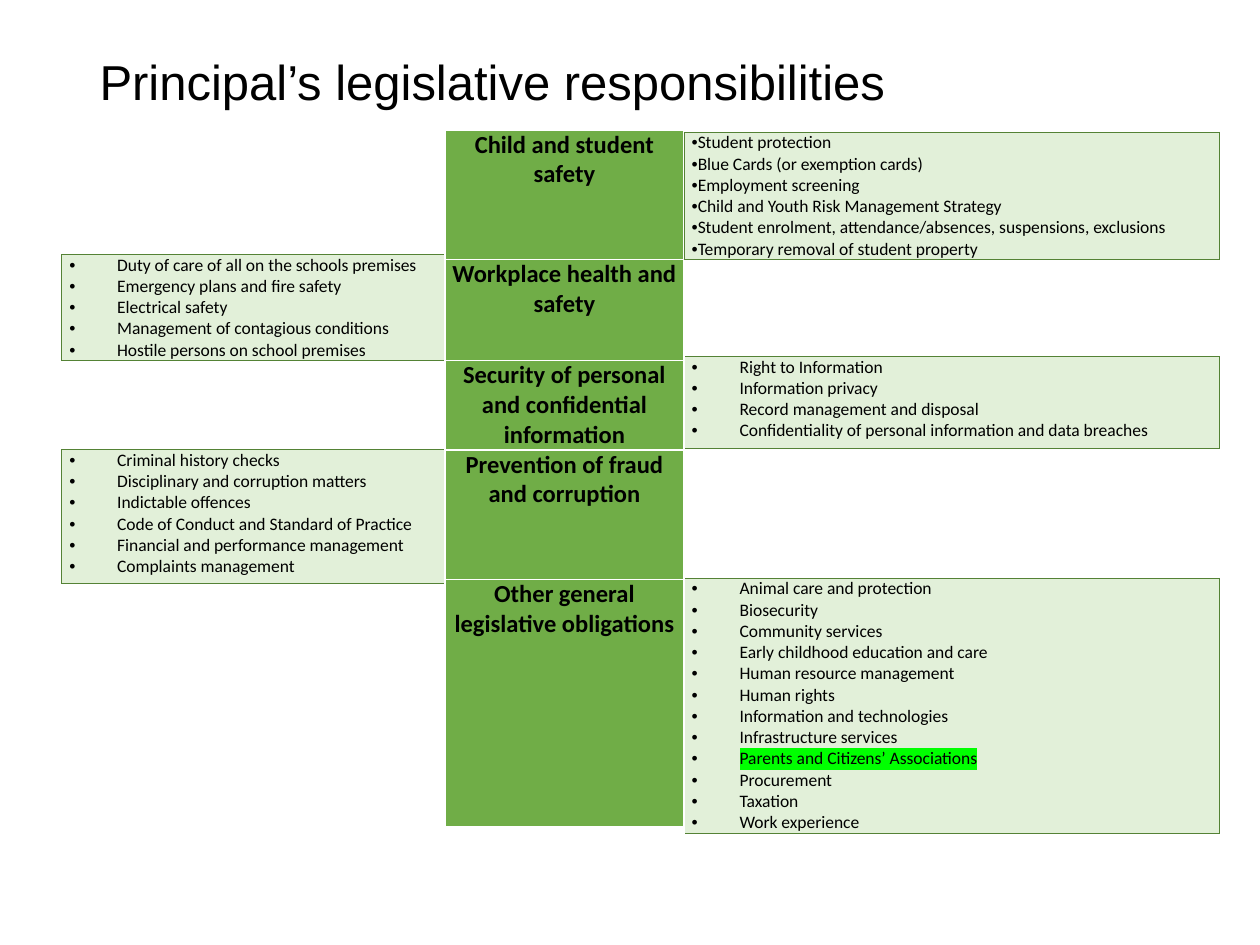
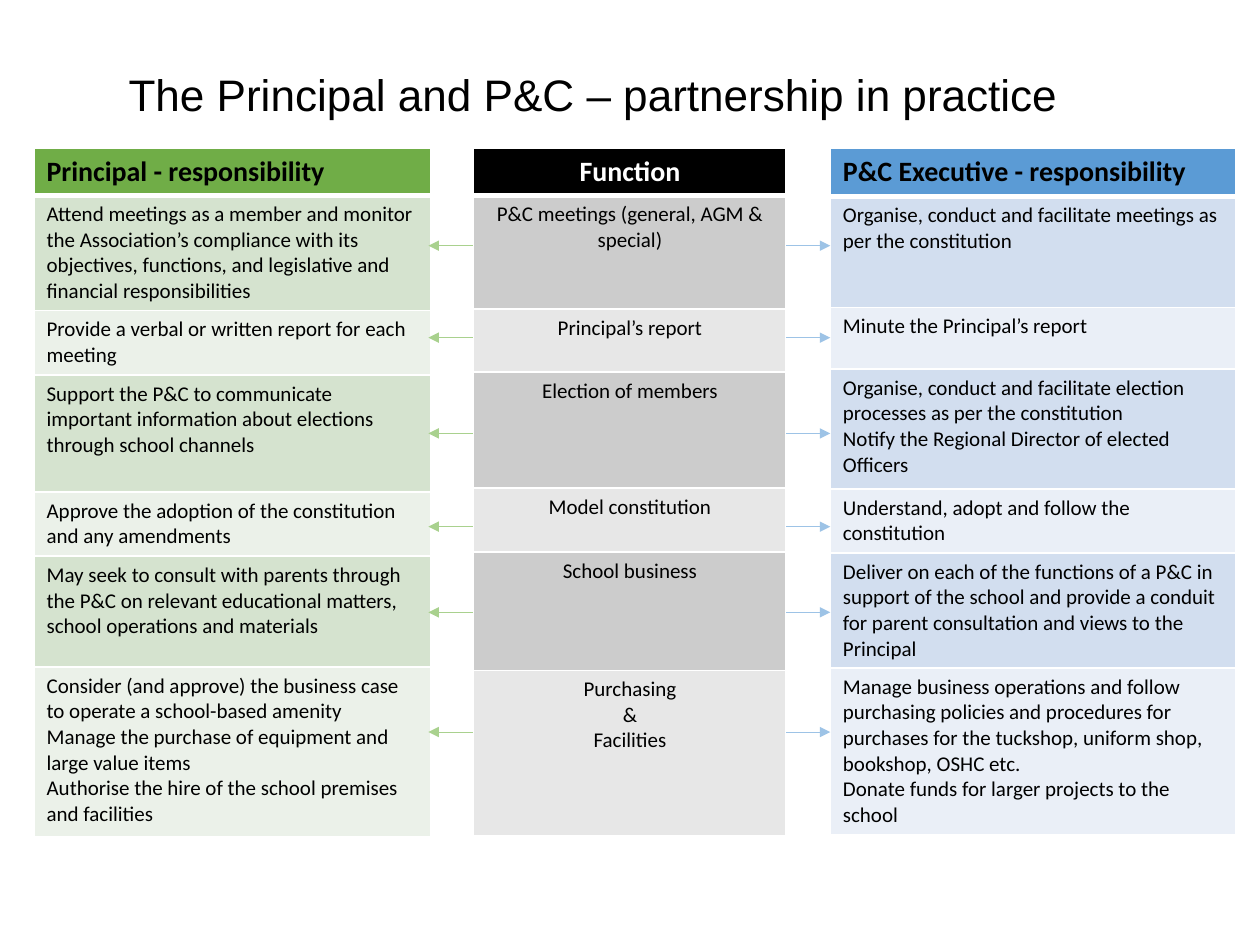
from lxml.etree import SubElement
from pptx import Presentation
from pptx.dml.color import RGBColor
from pptx.enum.shapes import MSO_CONNECTOR
from pptx.enum.text import MSO_ANCHOR, MSO_AUTO_SIZE, PP_ALIGN
from pptx.oxml.ns import qn
from pptx.util import Inches, Pt

BLACK, WHITE = "000000", "FFFFFF"
GREEN, DARK_GREEN, PALE_GREEN = "70AD47", "548235", "E2F0D9"
BLUE, LIME = "5B9BD5", "00FF00"
LEFT_ARROW, RIGHT_ARROW = "A9D18E", "9DC3E6"
WHITE_EDGE, GREEN_EDGE, HEADER_EDGE = (WHITE, 1), (DARK_GREEN, 0.5), (WHITE, 3)
BULLET_INDENT = 0.38
TIGHT_MARGINS = (0.06, 0)
NORMAL_MARGINS = (0.1, 0.05)

DUTY_AREAS = [
    ("Child and student safety", 1.03),
    ("Workplace health and safety", 0.8),
    ("Security of personal and confidential information", 0.7),
    ("Prevention of fraud and corruption", 1.03),
    ("Other general legislative obligations", 1.96),
]
STUDENT_SAFETY = [
    "Student protection",
    "Blue Cards (or exemption cards)",
    "Employment screening",
    "Child and Youth Risk Management Strategy",
    "Student enrolment, attendance/absences, suspensions, exclusions",
    "Temporary removal of student property",
]
WORKPLACE_SAFETY = [
    "Duty of care of all on the schools premises",
    "Emergency plans and fire safety",
    "Electrical safety",
    "Management of contagious conditions",
    "Hostile persons on school premises",
]
INFORMATION_SECURITY = [
    "Right to Information",
    "Information privacy",
    "Record management and disposal",
    "Confidentiality of personal information and data breaches",
]
FRAUD_PREVENTION = [
    "Criminal history checks",
    "Disciplinary and corruption matters",
    "Indictable offences",
    "Code of Conduct and Standard of Practice",
    "Financial and performance management",
    "Complaints management",
]
HIGHLIGHTED = "Parents and Citizens’ Associations"
OTHER_OBLIGATIONS = [
    "Animal care and protection",
    "Biosecurity",
    "Community services",
    "Early childhood education and care",
    "Human resource management",
    "Human rights",
    "Information and technologies",
    "Infrastructure services",
    HIGHLIGHTED,
    "Procurement",
    "Taxation",
    "Work experience",
]

EXECUTIVE_ROWS = [
    (["P&C Executive - responsibility"], 0.38),
    (["Organise, conduct and facilitate meetings as per the constitution"], 0.88),
    (["Minute the Principal’s report"], 0.49),
    (["Organise, conduct and facilitate election processes as per the constitution",
      "Notify the Regional Director of elected Officers"], 0.95),
    (["Understand, adopt and follow the constitution"], 0.51),
    (["Deliver on each of the functions of a P&C in support of the school and provide "
      "a conduit for parent consultation and views to the Principal"], 0.91),
    (["Manage business operations and follow purchasing policies and procedures for "
      "purchases for the tuckshop, uniform shop, bookshop, OSHC etc.",
      "Donate funds for larger projects to the school"], 1.31),
]
FUNCTION_ROWS = [
    (["Function"], 0.37),
    (["P&C meetings (general, AGM & special)"], 0.9),
    (["Principal’s report"], 0.5),
    (["Election of members"], 0.92),
    (["Model constitution"], 0.51),
    (["School business"], 0.94),
    (["Purchasing", "&", "Facilities"], 1.31),
]
PRINCIPAL_ROWS = [
    (["Principal - responsibility"], 0.37),
    (["Attend meetings as a member and monitor the Association’s compliance with its "
      "objectives, functions, and legislative and financial responsibilities"], 0.91),
    (["Provide a verbal or written report for each meeting"], 0.51),
    (["Support the P&C to communicate important information about elections through "
      "school channels"], 0.93),
    (["Approve the adoption of the constitution and any amendments"], 0.51),
    (["May seek to consult with parents through the P&C on relevant educational "
      "matters, school operations and materials"], 0.88),
    (["Consider (and approve) the business case to operate a school-based amenity",
      "Manage the purchase of equipment and large value items",
      "Authorise the hire of the school premises and facilities"], 1.35),
]
ARROW_HEIGHTS = [1.95, 2.68, 3.44, 4.18, 4.86, 5.81]


def color(value):
    """Turn a hex string into a colour."""
    return RGBColor.from_string(value)


def format_font(font, name, size, text_color, bold=False):
    """Set the face, size, colour and weight of a font."""
    font.name, font.size, font.bold = name, Pt(size), bold
    font.color.rgb = color(text_color)


def add_titled_slide(presentation, title, left, top, width, height, size):
    """Add a title-only slide with its title placed and formatted."""
    slide = presentation.slides.add_slide(presentation.slide_layouts[5])
    shape = slide.shapes.title
    shape.left, shape.top = Inches(left), Inches(top)
    shape.width, shape.height = Inches(width), Inches(height)
    frame = shape.text_frame
    frame.text = title
    frame.auto_size = MSO_AUTO_SIZE.NONE
    frame.vertical_anchor = MSO_ANCHOR.MIDDLE
    paragraph = frame.paragraphs[0]
    paragraph.alignment = PP_ALIGN.LEFT
    paragraph.line_spacing = 0.9
    format_font(paragraph.font, "Arial", size, BLACK)
    return slide


def add_column(slide, left, top, width, heights):
    """Add a plain one-column table and return its cells."""
    frame = slide.shapes.add_table(len(heights), 1, Inches(left), Inches(top),
                                   Inches(width), Inches(sum(heights)))
    table = frame.table
    table.first_row = table.horz_banding = False
    for row, height in zip(table.rows, heights):
        row.height = Inches(height)
    return [row.cells[0] for row in table.rows]


def set_borders(cell, left=WHITE_EDGE, right=WHITE_EDGE, top=WHITE_EDGE, bottom=WHITE_EDGE):
    """Draw the four edges of a cell, each given as colour and points."""
    properties = cell._tc.get_or_add_tcPr()
    edges = {"a:lnL": left, "a:lnR": right, "a:lnT": top, "a:lnB": bottom}
    for tag, (edge_color, points) in edges.items():
        line = SubElement(properties, qn(tag), w=str(Pt(points)))
        fill = SubElement(line, qn("a:solidFill"))
        SubElement(fill, qn("a:srgbClr"), val=edge_color)


def add_bullet(paragraph, indent):
    """Give a paragraph a round bullet with a hanging indent."""
    properties = paragraph._p.get_or_add_pPr()
    properties.set("marL", str(Inches(indent)))
    properties.set("indent", str(Inches(-BULLET_INDENT)))
    SubElement(properties, qn("a:buFont"), typeface="Arial")
    SubElement(properties, qn("a:buChar"), char="•")


def highlight(run, highlight_color):
    """Mark a run with a background colour."""
    mark = SubElement(run._r.get_or_add_rPr(), qn("a:highlight"))
    SubElement(mark, qn("a:srgbClr"), val=highlight_color)


def fill_cell(cell, lines, fill, size, margins, text_color=BLACK, bold=False,
              alignment=PP_ALIGN.LEFT, bullet_indent=None):
    """Fill a cell and write one paragraph for each line."""
    cell.fill.solid()
    cell.fill.fore_color.rgb = color(fill)
    cell.margin_left = cell.margin_right = Inches(margins[0])
    cell.margin_top = cell.margin_bottom = Inches(margins[1])
    cell.text_frame.text = "\n".join(lines)
    for paragraph in cell.text_frame.paragraphs:
        paragraph.alignment = alignment
        if bullet_indent is not None:
            add_bullet(paragraph, bullet_indent)
        format_font(paragraph.font, "Calibri", size, text_color, bold)


def add_duty_list(slide, duties, left, top, width, height, indent=BULLET_INDENT,
                  left_edge=GREEN_EDGE, right_edge=GREEN_EDGE):
    """Add a pale green box of bulleted duties."""
    cell, = add_column(slide, left, top, width, [height])
    set_borders(cell, left_edge, right_edge, GREEN_EDGE, GREEN_EDGE)
    fill_cell(cell, duties, PALE_GREEN, 10, TIGHT_MARGINS, bullet_indent=indent)
    for paragraph in cell.text_frame.paragraphs:
        if paragraph.text == HIGHLIGHTED:
            highlight(paragraph.runs[0], LIME)


def add_role_table(slide, rows, left, width, header_fill, bands, header_color=BLACK,
                   alignment=PP_ALIGN.LEFT):
    """Add a banded column with a heading for one role."""
    cells = add_column(slide, left, 1.18, width, [height for _, height in rows])
    for index, (cell, (lines, _)) in enumerate(zip(cells, rows)):
        if index == 0:
            set_borders(cell, bottom=HEADER_EDGE)
            fill_cell(cell, lines, header_fill, 16, NORMAL_MARGINS, header_color, True, alignment)
        else:
            set_borders(cell, top=HEADER_EDGE if index == 1 else WHITE_EDGE)
            fill_cell(cell, lines, bands[(index - 1) % 2], 12, NORMAL_MARGINS, alignment=alignment)


def add_arrow(slide, start, end, height, line_color):
    """Add a thin horizontal arrow."""
    arrow = slide.shapes.add_connector(MSO_CONNECTOR.STRAIGHT, Inches(start), Inches(height),
                                       Inches(end), Inches(height))
    arrow.line.color.rgb = color(line_color)
    arrow.line.width = Pt(0.5)
    SubElement(arrow.get_or_add_ln(), qn("a:tailEnd"), type="triangle")
    SubElement(arrow._element.spPr, qn("a:effectLst"))


def build_responsibilities(presentation):
    """Build the slide of legislative responsibilities."""
    slide = add_titled_slide(presentation, "Principal’s legislative responsibilities",
                             0.69, 0.31, 8.62, 0.73, 28)
    cells = add_column(slide, 3.53, 1.03, 1.9, [height for _, height in DUTY_AREAS])
    for cell, (area, _) in zip(cells, DUTY_AREAS):
        set_borders(cell)
        fill_cell(cell, [area], GREEN, 14, TIGHT_MARGINS, bold=True, alignment=PP_ALIGN.CENTER)
    left_side, right_side = 0.49, 5.43
    add_duty_list(slide, STUDENT_SAFETY, right_side, 1.05, 4.25, 1, indent=0)
    add_duty_list(slide, WORKPLACE_SAFETY, left_side, 2.02, 3.04, 0.83, right_edge=WHITE_EDGE)
    add_duty_list(slide, OTHER_OBLIGATIONS, right_side, 4.59, 4.25, 2, left_edge=WHITE_EDGE)
    add_duty_list(slide, FRAUD_PREVENTION, left_side, 3.57, 3.04, 1.06, right_edge=WHITE_EDGE)
    add_duty_list(slide, INFORMATION_SECURITY, right_side, 2.83, 4.25, 0.73, left_edge=WHITE_EDGE)


def build_partnership(presentation):
    """Build the slide comparing the principal with the executive."""
    slide = add_titled_slide(presentation, "The Principal and P&C – partnership in practice",
                             0.92, 0.47, 8.1, 0.61, 25.2)
    add_role_table(slide, EXECUTIVE_ROWS, 6.59, 3.22, BLUE, ("D2DEEF", "EAEFF7"))
    add_role_table(slide, FUNCTION_ROWS, 3.76, 2.48, BLACK, ("CCCCCC", "E7E7E7"),
                   WHITE, PP_ALIGN.CENTER)
    add_role_table(slide, PRINCIPAL_ROWS, 0.27, 3.15, GREEN, ("D5E3CF", "EBF1E9"))
    for start, end, line_color in ((3.75, 3.4, LEFT_ARROW), (6.24, 6.59, RIGHT_ARROW)):
        for height in ARROW_HEIGHTS:
            add_arrow(slide, start, end, height, line_color)


def main():
    """Build and save the presentation."""
    presentation = Presentation()
    presentation.slide_width, presentation.slide_height = Inches(10), Inches(7.5)
    build_responsibilities(presentation)
    build_partnership(presentation)
    presentation.save("out.pptx")


if __name__ == "__main__":
    main()
